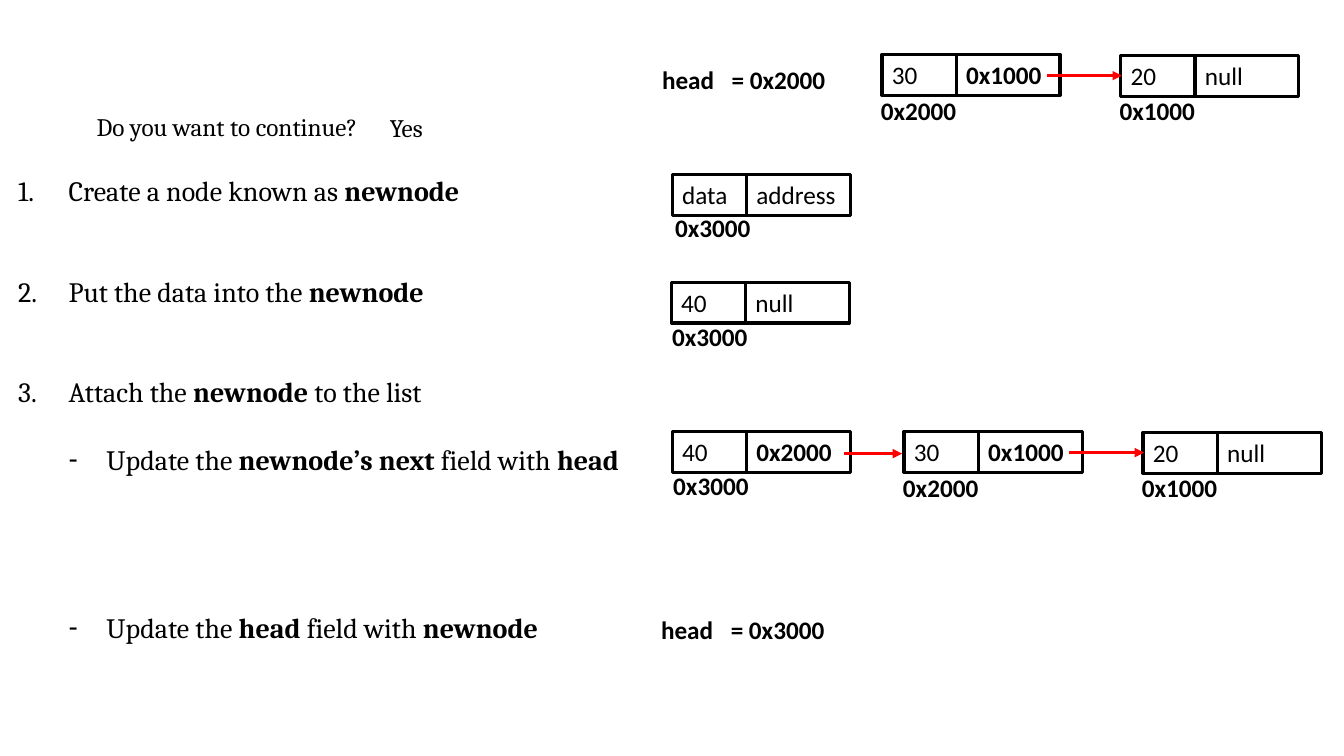
import pptx
import pptx.util
import pptx.dml.color
import pptx.enum.shapes
import pptx.enum.text
from lxml import etree

Pt = pptx.util.Pt
BLACK, RED = "000000", "FF0000"

STEPS = [
    ("number", 0, [("Create a node known as ", False), ("newnode", True)]),
    ("number", 48, [("Put the data into the ", False), ("newnode", True)]),
    ("number", 48, [("Attach the ", False), ("newnode", True), (" to the list", False)]),
    ("dash", 24, [("Update the ", False), ("newnode’s next", True),
                  (" field with ", False), ("head", True)]),
    ("dash", 96, [("Update the ", False), ("head", True),
                  (" field with ", False), ("newnode", True)]),
]
BULLETS = {
    "number": (0, 36, -36, "buAutoNum", {"type": "arabicPeriod"}),
    "dash": (1, 63, -27, "buChar", {"char": "-"}),
}
NODES = [
    (630, 38.9, "30", "0x1000", "0x2000", 622.1, 64.8),
    (800.6, 39.6, "20", "null", "0x1000", 792.7, 64.8),
    (480.2, 124.6, "data", "address", "0x3000", 475.2, 148.3),
    (479.5, 201.6, "40", "null", "0x3000", 473, 226.1),
    (480.2, 308.2, "40", "0x2000", "0x3000", 473.8, 332.6),
    (645.8, 308.2, "30", "0x1000", "0x2000", 637.9, 334.1),
    (816.5, 308.9, "20", "null", "0x1000", 808.6, 334.1),
]
ARROWS = [(748, 801.4, 54), (602.6, 644.4, 324), (763.9, 817.2, 323.3)]
HEADS = [(465.8, 42.5, "= 0x2000"), (465.1, 434.9, "= 0x3000")]
PROMPTS = [(61.9, 75.6, 223.2, "Do you want to continue?"), (271.4, 77, 49.7, "Yes")]
DATA_W, NEXT_W, ROW_H = 53, 74.2, 29.1


def color(value):
    return pptx.dml.color.RGBColor.from_string(value)


def add_run(p, text, font, size, bold=False):
    r = p.add_run()
    r.text = text
    r.font.name = font
    r.font.size = Pt(size)
    r.font.bold = bold
    r.font.color.rgb = color(BLACK)


def add_label(s, x, y, w, text, font="Calibri", bold=True):
    tf = s.shapes.add_textbox(Pt(x), Pt(y), Pt(w), Pt(ROW_H)).text_frame
    tf.word_wrap = False
    add_run(tf.paragraphs[0], text, font, 18, bold)


def add_cell(group, x, y, w, text):
    sp = group.shapes.add_shape(pptx.enum.shapes.MSO_SHAPE.RECTANGLE,
                                Pt(x), Pt(y), Pt(w), Pt(ROW_H))
    sp.shadow.inherit = False
    sp.fill.background()
    sp.line.color.rgb = color(BLACK)
    sp.line.width = Pt(2.25)
    tf = sp.text_frame
    tf.word_wrap = True
    p = tf.paragraphs[0]
    p.alignment = pptx.enum.text.PP_ALIGN.LEFT
    add_run(p, text, "Calibri", 18, text.startswith("0x"))


def add_node(s, x, y, data, following, address, label_x, label_y):
    group = s.shapes.add_group_shape()
    add_cell(group, x, y, DATA_W, data)
    add_cell(group, x + DATA_W, y, NEXT_W, following)
    add_label(s, label_x, label_y, 69.1, address)


def add_arrow(s, x1, x2, y):
    line = s.shapes.add_connector(pptx.enum.shapes.MSO_CONNECTOR.STRAIGHT,
                                  Pt(x1), Pt(y), Pt(x2), Pt(y))
    line.line.color.rgb = color(RED)
    line.line.width = Pt(2.25)
    ln = line.line._get_or_add_ln()
    etree.SubElement(ln, pptx.oxml.ns.qn("a:tailEnd"), type="triangle")
    etree.SubElement(line._element.spPr, pptx.oxml.ns.qn("a:effectLst"))


def fill_steps(body):
    body.left, body.top, body.width, body.height = Pt(5.8), Pt(120.2), Pt(457.2), Pt(370.8)
    tf = body.text_frame
    tf.word_wrap = True
    tf.auto_size = pptx.enum.text.MSO_AUTO_SIZE.NONE
    for i, (kind, gap, runs) in enumerate(STEPS):
        p = tf.add_paragraph() if i else tf.paragraphs[0]
        level, margin, indent, tag, attributes = BULLETS[kind]
        p.level = level
        p.space_before = Pt(gap)
        pPr = p._p.get_or_add_pPr()
        pPr.set("marL", str(Pt(margin)))
        pPr.set("indent", str(Pt(indent)))
        etree.SubElement(pPr, pptx.oxml.ns.qn("a:" + tag), attributes)
        for text, bold in runs:
            add_run(p, text, "Cambria", 20, bold)


def main():
    prs = pptx.Presentation()
    prs.slide_width, prs.slide_height = Pt(960), Pt(540)
    s = prs.slides.add_slide(prs.slide_layouts[1])
    title = s.shapes.title._element
    title.getparent().remove(title)
    fill_steps(s.placeholders[1])
    for x, y, value in HEADS:
        add_label(s, x, y, 51.8, "head")
        add_label(s, x + 49.8, y, 82.6, value)
    for x, y, w, text in PROMPTS:
        add_label(s, x, y, w, text, "Cambria", False)
    for node in NODES:
        add_node(s, *node)
    for arrow in ARROWS:
        add_arrow(s, *arrow)
    prs.save("out.pptx")


if __name__ == "__main__":
    main()
